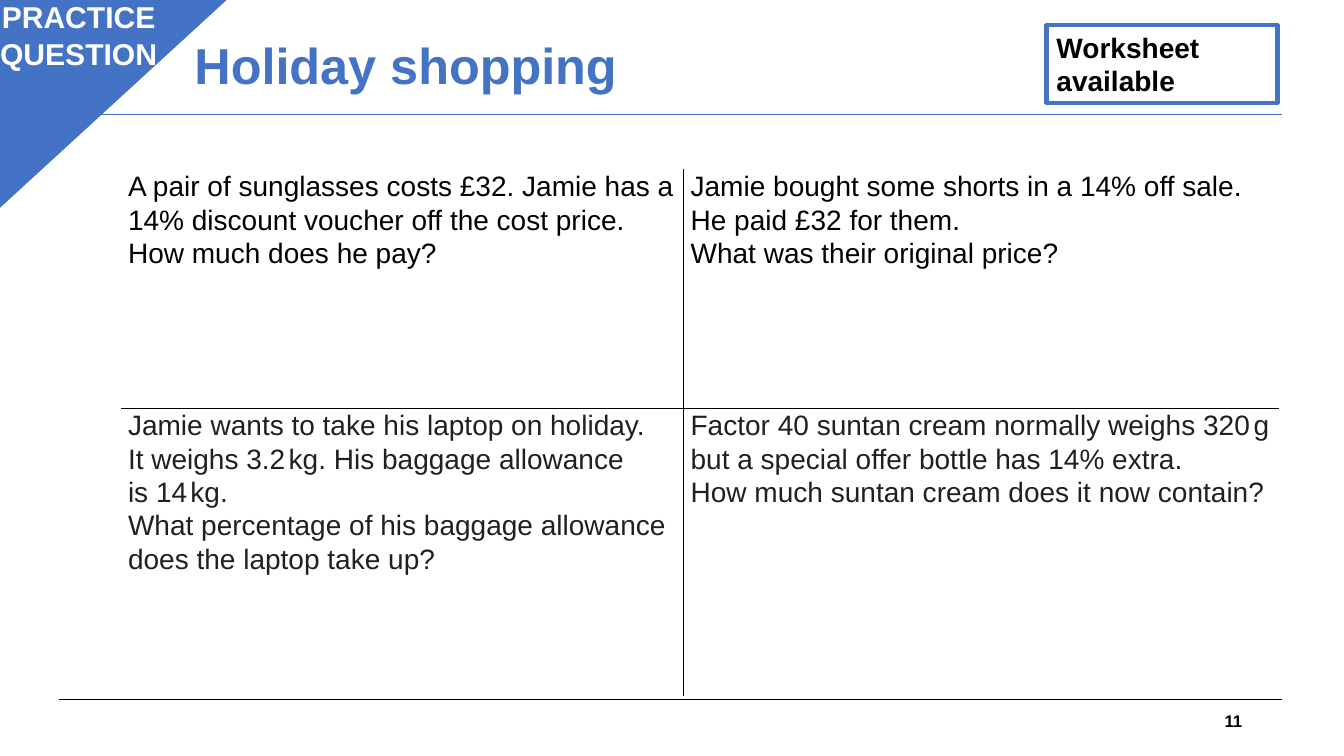
from lxml import etree
from pptx import Presentation
from pptx.dml.color import RGBColor
from pptx.enum.shapes import MSO_CONNECTOR, MSO_SHAPE
from pptx.enum.text import MSO_ANCHOR, PP_ALIGN
from pptx.oxml.ns import qn
from pptx.util import Inches, Pt

STRAIGHT = MSO_CONNECTOR.STRAIGHT
RECTANGLE, TRIANGLE = MSO_SHAPE.RECTANGLE, MSO_SHAPE.ISOSCELES_TRIANGLE
LEFT, CENTER, RIGHT = PP_ALIGN.LEFT, PP_ALIGN.CENTER, PP_ALIGN.RIGHT
TOP, MIDDLE = MSO_ANCHOR.TOP, MSO_ANCHOR.MIDDLE

COLORS = {"blue": "4472C4", "black": "000000", "white": "FFFFFF", "charcoal": "231F20"}
FONT = "Arial"
UNIT_GAP = " "
UNIT_GAP_SIZE = 8
COLUMN_WIDTHS = (5.58, 5.91)
ROW_HEIGHTS = (2.37, 2.86)
QUESTIONS = (
    (
        (
            ("A pair of sunglasses costs £32. Jamie has a 14% discount voucher off the cost price.",),
            ("How much does he pay?",),
        ),
        (
            ("Jamie bought some shorts in a 14% off sale. He paid £32 for them.",),
            ("What was their original price?",),
        ),
    ),
    (
        (
            ("Jamie wants to take his laptop on holiday.",),
            ("It weighs 3.2", UNIT_GAP, "kg. His baggage allowance \nis 14", UNIT_GAP, "kg."),
            ("What percentage of his baggage allowance does the laptop take up?",),
        ),
        (
            ("Factor 40 suntan cream normally weighs 320", UNIT_GAP,
             "g but a special offer bottle has 14% extra."),
            ("How much suntan cream does it now contain?",),
        ),
    ),
)


def rgb(name):
    """Return the named palette colour."""
    return RGBColor.from_string(COLORS[name])


def write_text(frame, paragraphs, size=20, color="black", bold=False,
               align=LEFT, anchor=TOP, spacing=1.0):
    """Fill a text frame with paragraphs, each a sequence of runs."""
    frame.word_wrap = True
    frame.vertical_anchor = anchor
    for index, runs in enumerate(paragraphs):
        paragraph = frame.paragraphs[0] if index == 0 else frame.add_paragraph()
        paragraph.alignment = align
        paragraph.line_spacing = spacing
        for text in runs:
            for line_index, line in enumerate(text.split("\n")):
                if line_index:
                    paragraph.add_line_break()
                run = paragraph.add_run()
                run.text = line
                run.font.name = FONT
                run.font.size = Pt(UNIT_GAP_SIZE if text == UNIT_GAP else size)
                run.font.bold = bold
                run.font.color.rgb = rgb(color)


def add_text(slide, box, text, **text_format):
    """Add a text box holding one paragraph."""
    shape = slide.shapes.add_textbox(*map(Inches, box))
    write_text(shape.text_frame, [(text,)], **text_format)


def add_rule(slide, left, top, width, color):
    """Draw a thin horizontal rule."""
    connector = slide.shapes.add_connector(
        STRAIGHT, Inches(left), Inches(top), Inches(left + width), Inches(top))
    connector.line.color.rgb = rgb(color)
    connector.line.width = Pt(0.75)
    etree.SubElement(connector._element.spPr, qn("a:effectLst"))


def add_shape(slide, kind, box, line_width):
    """Add an unfilled preset shape with a blue outline."""
    shape = slide.shapes.add_shape(kind, *map(Inches, box))
    shape.shadow.inherit = False
    shape.fill.background()
    shape.line.color.rgb = rgb("blue")
    shape.line.width = Pt(line_width)
    return shape


def add_frame(slide, left, top, width, height):
    """Add the rules, title and slide number within the page area."""
    bottom = top + height
    add_rule(slide, left, bottom, width, "black")
    add_rule(slide, left, top, width, "blue")
    add_text(slide, (left + 1.24, top - 1.02, 10, 1.11), "Holiday shopping",
             size=36, color="blue", bold=True, anchor=MIDDLE, spacing=0.9)
    add_text(slide, (left + width - 3.3, bottom + 0.01, 3, 0.4), "11",
             size=12, bold=True, align=RIGHT, anchor=MIDDLE)


def add_corner_flag(slide, left, top, width, height):
    """Add the corner triangle with its label."""
    triangle = add_shape(slide, TRIANGLE, (left, top, width, height), 1)
    triangle.adjustments[0] = 0
    triangle._element.spPr.find(qn("a:xfrm")).set("flipV", "1")
    triangle.fill.solid()
    triangle.fill.fore_color.rgb = rgb("blue")
    add_text(slide, (left - 0.25, top - 0.04, 2.12, 0.84), "PRACTICE QUESTION",
             size=21.5, color="white", bold=True, align=CENTER)


def add_worksheet_badge(slide, *box):
    """Add the outlined worksheet note."""
    badge = add_shape(slide, RECTANGLE, box, 3)
    write_text(badge.text_frame, [("Worksheet\navailable",)], bold=True)


def set_borders(cell, sides):
    """Draw a black border on the given sides and none elsewhere."""
    properties = cell._tc.get_or_add_tcPr()
    for side in "LRTB":
        line = etree.SubElement(properties, qn(f"a:ln{side}"), w=str(Pt(1)))
        if side in sides:
            fill = etree.SubElement(line, qn("a:solidFill"))
            etree.SubElement(fill, qn("a:srgbClr"), val=COLORS["black"])
        else:
            etree.SubElement(line, qn("a:noFill"))


def add_question_grid(slide, left, top, width, height):
    """Add the two by two table of questions."""
    table = slide.shapes.add_table(
        len(ROW_HEIGHTS), len(COLUMN_WIDTHS), *map(Inches, (left, top, width, height))).table
    table.first_row = table.horz_banding = False
    for column, column_width in zip(table.columns, COLUMN_WIDTHS):
        column.width = Inches(column_width)
    for row_index, row in enumerate(table.rows):
        row.height = Inches(ROW_HEIGHTS[row_index])
        for column_index, cell in enumerate(row.cells):
            set_borders(cell, "RL"[column_index] + "BT"[row_index])
            cell.fill.background()
            cell.margin_left = cell.margin_right = Inches(0.07)
            cell.margin_top = cell.margin_bottom = 0
            write_text(cell.text_frame, QUESTIONS[row_index][column_index],
                       color=("black", "charcoal")[row_index], spacing=1.07)


def main():
    """Build and save the slide."""
    presentation = Presentation()
    presentation.slide_width = Inches(13.33)
    presentation.slide_height = Inches(7.5)
    slide = presentation.slides.add_slide(presentation.slide_layouts[6])
    add_frame(slide, 0.59, 1.14, 12.13, 5.8)
    add_corner_flag(slide, -0.03, -0.02, 2.29, 2.1)
    add_worksheet_badge(slide, 10.38, 0.25, 2.29, 0.77)
    add_question_grid(slide, 1.2, 1.68, sum(COLUMN_WIDTHS), sum(ROW_HEIGHTS))
    presentation.save("out.pptx")


if __name__ == "__main__":
    main()
